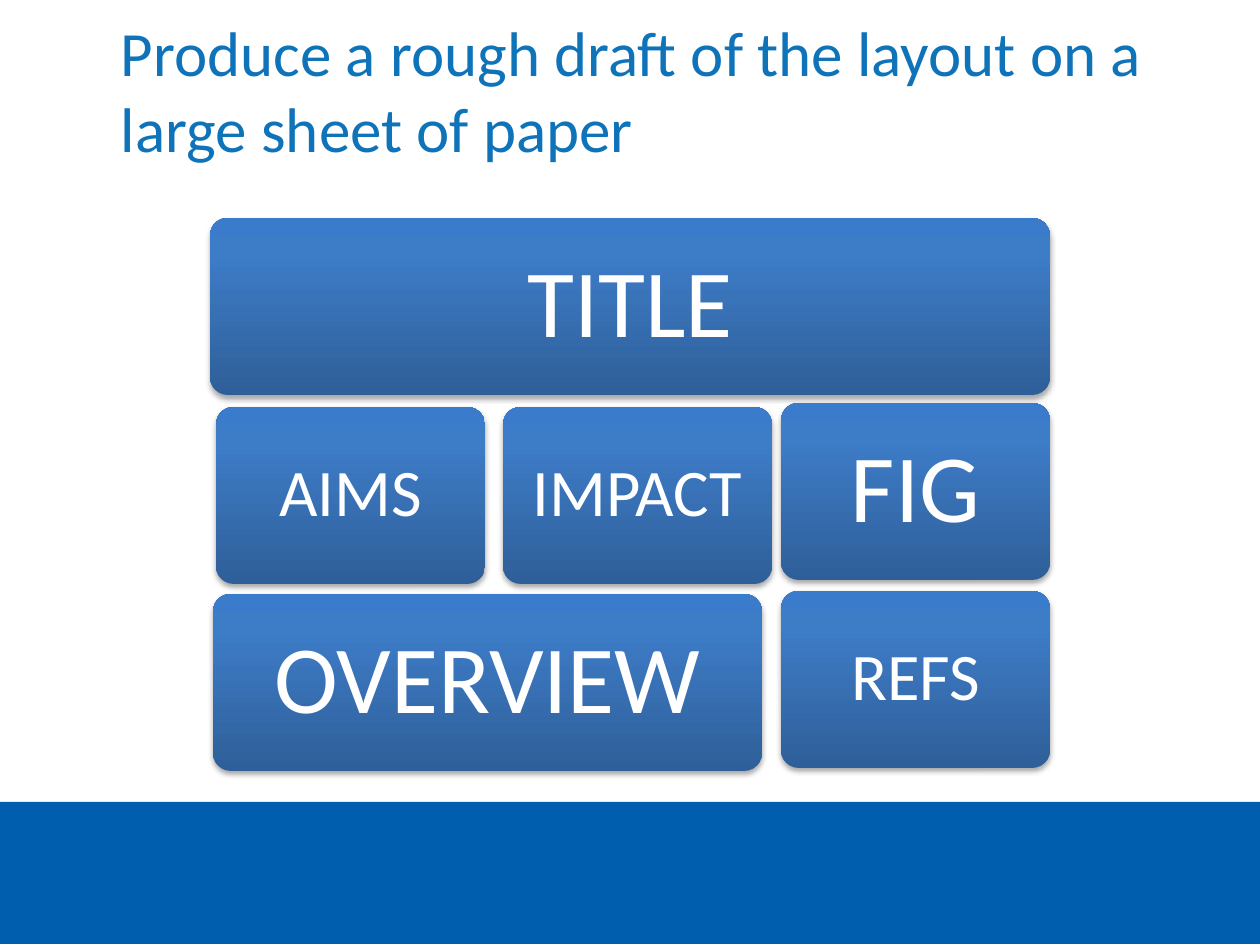
from copy import deepcopy
from typing import NamedTuple

from lxml import etree
from pptx import Presentation
from pptx.dml.color import RGBColor
from pptx.enum.shapes import MSO_SHAPE
from pptx.enum.text import MSO_ANCHOR, PP_ALIGN
from pptx.oxml.ns import qn
from pptx.util import Pt

RECT, ROUNDED = MSO_SHAPE.RECTANGLE, MSO_SHAPE.ROUNDED_RECTANGLE
MIDDLE, BOTTOM = MSO_ANCHOR.MIDDLE, MSO_ANCHOR.BOTTOM
CENTER = PP_ALIGN.CENTER
FONT = "Calibri"
EMU_PER_PX = 914400 / 126
PANEL_HEIGHT = 177
PANEL_INSET = 12
NARROW = 269
GRADIENT = [(0, "2F5F99"), (0.8, "3D7CC7"), (1, "3A7CCB")]


class Panel(NamedTuple):
    text: str
    left: int
    top: int
    width: int
    size: int


PANELS = [
    Panel("TITLE", 210, 218, 840, 55),
    Panel("OVERVIEW", 213, 594, 549, 55),
    Panel("AIMS", 216, 407, NARROW, 38),
    Panel("IMPACT", 503, 407, NARROW, 38),
    Panel("FIG", 781, 403, NARROW, 55),
    Panel("REFS", 781, 591, NARROW, 38),
]


def px(n: int) -> int:
    return round(n * EMU_PER_PX)


def rgb(value: str) -> RGBColor:
    return RGBColor.from_string(value)


def set_text(sp, text: str, size: int, color: str, anchor, inset: int):
    tf = sp.text_frame
    tf.word_wrap = True
    tf.vertical_anchor = anchor
    tf.margin_left = tf.margin_right = px(inset)
    tf.margin_top = tf.margin_bottom = px(inset)
    p = tf.paragraphs[0]
    p.text = text
    p.font.name = FONT
    p.font.size = Pt(size)
    p.font.color.rgb = rgb(color)
    return p


def fill_gradient(sp) -> None:
    fill = sp.fill
    fill.gradient()
    fill.gradient_angle = 90
    stops = sp._element.spPr.find(".//" + qn("a:gsLst"))
    stops.append(deepcopy(stops[-1]))
    for stop, (position, color) in zip(fill.gradient_stops, GRADIENT):
        stop.position = position
        stop.color.rgb = rgb(color)


def add_shadow(sp) -> None:
    sp.shadow.inherit = False
    effects = sp._element.spPr.find(qn("a:effectLst"))
    shadow = etree.SubElement(effects, qn("a:outerShdw"), blurRad="40000",
                              dist="23000", dir="5400000", rotWithShape="0")
    color = etree.SubElement(shadow, qn("a:srgbClr"), val="000000")
    etree.SubElement(color, qn("a:alpha"), val="35000")


def add_panel(s, panel: Panel) -> None:
    sp = s.shapes.add_shape(ROUNDED, px(panel.left), px(panel.top),
                            px(panel.width), px(PANEL_HEIGHT))
    sp.adjustments[0] = 0.1
    fill_gradient(sp)
    sp.line.fill.background()
    add_shadow(sp)
    p = set_text(sp, panel.text, panel.size, "FFFFFF", MIDDLE, PANEL_INSET)
    p.alignment = CENTER
    p.line_spacing = 0.9


def main() -> None:
    prs = Presentation()
    prs.slide_width, prs.slide_height = px(1260), px(945)
    s = prs.slides.add_slide(prs.slide_layouts[6])

    # Footer band
    band = s.shapes.add_shape(RECT, 0, px(802), px(1260), px(142))
    band.fill.solid()
    band.fill.fore_color.rgb = rgb("005EAE")
    band.line.fill.background()
    band.shadow.inherit = False

    # Heading
    heading = s.shapes.add_textbox(px(121), px(11), px(1033), px(154))
    set_text(heading, "Produce a rough draft of the layout on a large sheet of paper",
             36, "0E73B9", BOTTOM, 0)

    # Poster layout
    for panel in PANELS:
        add_panel(s, panel)

    prs.save("out.pptx")


if __name__ == "__main__":
    main()
